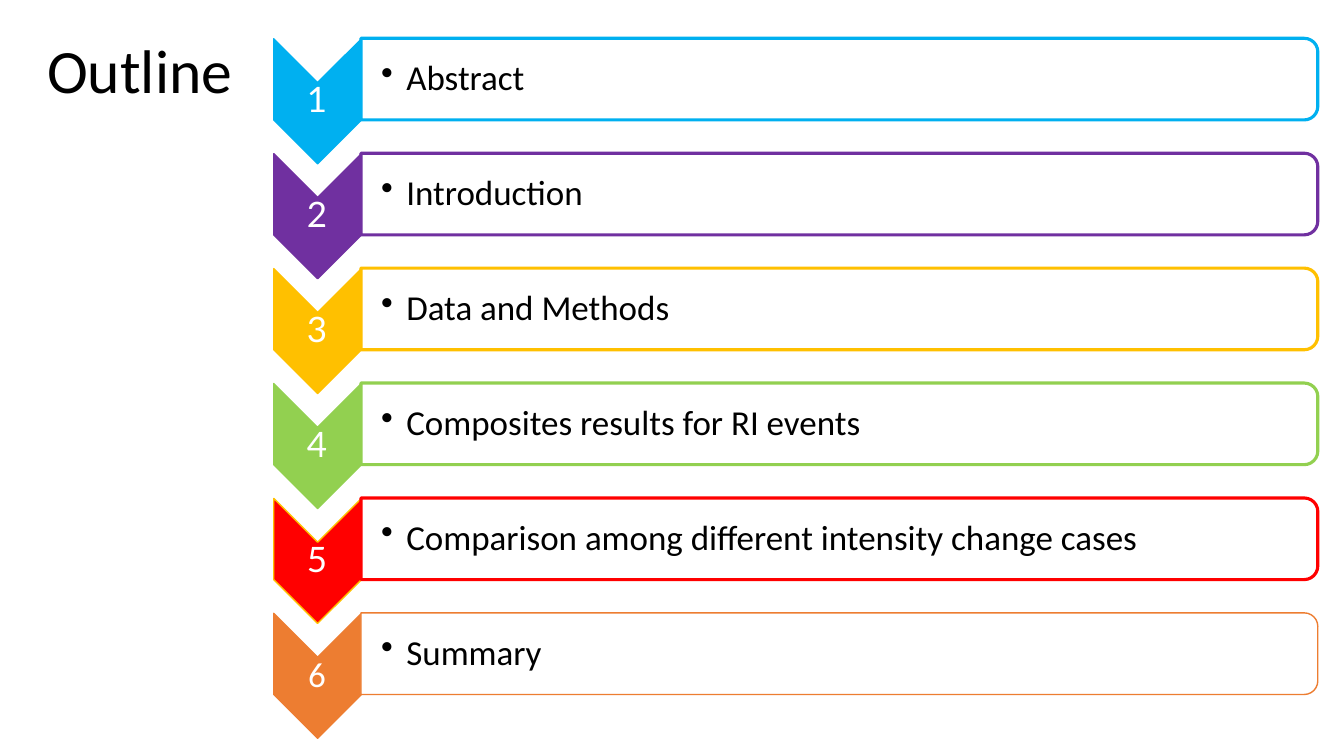
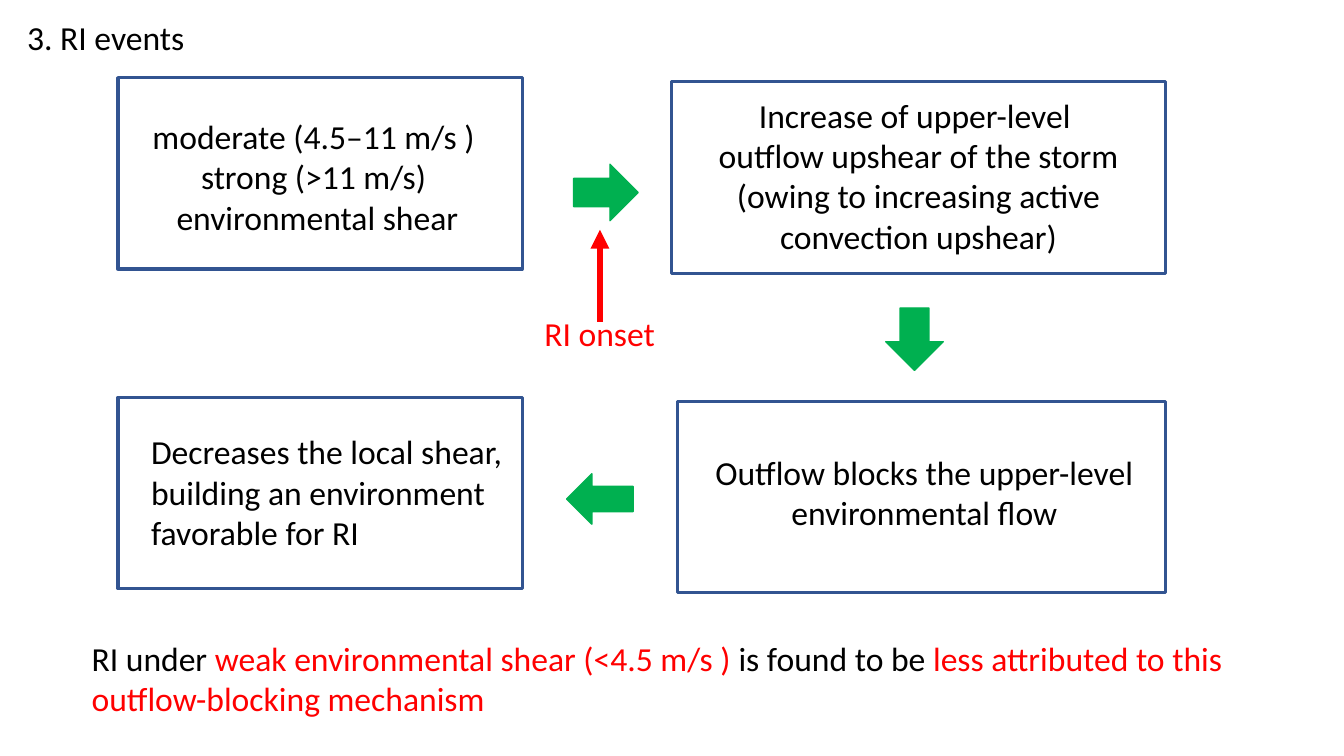
from dataclasses import dataclass
from typing import NamedTuple

from lxml import etree
from pptx import Presentation
from pptx import util as u
from pptx.dml.color import RGBColor
from pptx.enum import shapes, text
from pptx.oxml import ns

EMU_PER_PX = 9144  # 100 px to the inch

BLACK, WHITE, RED = "000000", "FFFFFF", "FF0000"
BOX_BLUE, FLOW_GREEN = "325491", "00B050"
BODY_FONT, NUMBER_FONT = "Calibri", "Lato"

LEFT, CENTER, JUSTIFY = text.PP_ALIGN.LEFT, text.PP_ALIGN.CENTER, text.PP_ALIGN.JUSTIFY
TOP, MIDDLE = text.MSO_ANCHOR.TOP, text.MSO_ANCHOR.MIDDLE
SHAPE = shapes.MSO_SHAPE


class Area(NamedTuple):
    left: int
    top: int
    width: int
    height: int


class Span(NamedTuple):
    text: str
    color: str = BLACK


@dataclass(frozen=True)
class TextStyle:
    size: int = 24
    font: str = BODY_FONT
    align: text.PP_ALIGN = LEFT
    anchor: text.MSO_ANCHOR = TOP
    spacing: float = 1.0
    insets: tuple[int, int, int, int] = (10, 5, 10, 5)
    wrap: bool = True
    bullet_indent: int = 0


@dataclass(frozen=True)
class Topic:
    name: str
    color: str
    chevron_line: str
    bar_line_pt: float = 2.25
    number_font: str = NUMBER_FONT


@dataclass(frozen=True)
class Step:
    box: Area
    text_area: Area
    words: str
    align: text.PP_ALIGN = CENTER


@dataclass(frozen=True)
class FlowArrow:
    area: Area
    rotation: int


TOPICS = [
    Topic("Abstract", "00B0F0", "00B0F0"),
    Topic("Introduction", "7030A0", "7030A0"),
    Topic("Data and Methods", "FFC000", "FFC000"),
    Topic("Composites results for RI events", "92D050", "92D050"),
    Topic("Comparison among different intensity change cases", RED, "FFC000"),
    Topic("Summary", "ED7D31", "ED7D31", 1, BODY_FONT),
]
TOPIC_PITCH = 114

STEPS = [
    Step(Area(117, 77, 401, 190), Area(140, 110, 342, 131),
         "moderate (4.5–11 m/s ) \nstrong (>11 m/s)\n environmental shear"),
    Step(Area(666, 81, 490, 190), Area(699, 89, 424, 172),
         "Increase of upper-level \noutflow upshear of the storm\n"
         "(owing to increasing active convection upshear)"),
    Step(Area(672, 398, 484, 190), Area(587, 443, 667, 91),
         "Outflow blocks the upper-level \nenvironmental flow "),
    Step(Area(117, 394, 401, 190), Area(140, 423, 667, 131),
         "Decreases the local shear,\nbuilding an environment\nfavorable for RI", LEFT),
]

FLOW_ARROWS = [
    FlowArrow(Area(569, 163, 64, 56), 0),
    FlowArrow(Area(876, 308, 62, 57), 90),
    FlowArrow(Area(562, 470, 66, 50), 180),
]

CONCLUSION = [
    [Span("RI under "), Span("weak environmental shear (<4.5 m/s ) ", RED),
     Span("is found to be "), Span("less attributed to this", RED)],
    [Span("outflow-blocking mechanism", RED)],
]


def px(length: int) -> u.Emu:
    return u.Emu(length * EMU_PER_PX)


def rgb(color: str) -> RGBColor:
    return RGBColor.from_string(color)


def plain(words: str, color: str = BLACK) -> list[list[Span]]:
    """Split words into one single-coloured paragraph per line."""
    return [[Span(line, color)] for line in words.split("\n")]


def add_bullet(paragraph, indent: int) -> None:
    properties = paragraph._p.get_or_add_pPr()
    properties.set("marL", str(px(indent)))
    properties.set("indent", str(-px(indent)))
    etree.SubElement(properties, ns.qn("a:buChar")).set("char", "•")


def add_text(slide, area: Area, paragraphs: list[list[Span]], style: TextStyle) -> None:
    frame = slide.shapes.add_textbox(*map(px, area)).text_frame
    frame.word_wrap = style.wrap
    frame.vertical_anchor = style.anchor
    (frame.margin_left, frame.margin_top,
     frame.margin_right, frame.margin_bottom) = map(px, style.insets)
    for index, spans in enumerate(paragraphs):
        paragraph = frame.add_paragraph() if index else frame.paragraphs[0]
        paragraph.alignment = style.align
        paragraph.line_spacing = style.spacing
        if style.bullet_indent:
            add_bullet(paragraph, style.bullet_indent)
        for span in spans:
            run = paragraph.add_run()
            run.text = span.text
            run.font.size = u.Pt(style.size)
            run.font.name = style.font
            run.font.color.rgb = rgb(span.color)


def add_figure(slide, preset: shapes.MSO_SHAPE, area: Area, fill: str | None,
               line: str, line_pt: float, rotation: int = 0) -> None:
    figure = slide.shapes.add_shape(preset, *map(px, area))
    figure.shadow.inherit = False
    figure.rotation = rotation
    if fill is None:
        figure.fill.background()
    else:
        figure.fill.solid()
        figure.fill.fore_color.rgb = rgb(fill)
    figure.line.color.rgb = rgb(line)
    figure.line.width = u.Pt(line_pt)


def add_arrow_line(slide, start: tuple[int, int], end: tuple[int, int],
                   color: str, width_pt: float) -> None:
    arrow = slide.shapes.add_connector(
        shapes.MSO_CONNECTOR.STRAIGHT, *map(px, start + end))
    arrow.line.color.rgb = rgb(color)
    arrow.line.width = u.Pt(width_pt)
    etree.SubElement(arrow.line._get_or_add_ln(), ns.qn("a:tailEnd")).set("type", "triangle")
    etree.SubElement(arrow._element.spPr, ns.qn("a:effectLst"))


def add_topic(slide, index: int, topic: Topic) -> None:
    offset = index * TOPIC_PITCH
    number_style = TextStyle(25, topic.number_font, CENTER, MIDDLE, 0.9, (2, 2, 2, 2))
    name_style = TextStyle(25, anchor=MIDDLE, spacing=0.9, insets=(19, 2, 2, 2),
                           bullet_indent=25)
    add_figure(slide, SHAPE.CHEVRON, Area(253, 57 + offset, 124, 87),
               topic.color, topic.chevron_line, 1, 90)
    add_text(slide, Area(271, 82 + offset, 87, 37),
             plain(str(index + 1), WHITE), number_style)
    add_figure(slide, SHAPE.ROUND_2_SAME_RECTANGLE, Area(792, -396 + offset, 81, 949),
               WHITE, topic.color, topic.bar_line_pt, 90)
    add_text(slide, Area(359, 42 + offset, 945, 73), plain(topic.name), name_style)


def build_outline(slide) -> None:
    add_text(slide, Area(37, 0, 1150, 145), plain("Outline"),
             TextStyle(44, anchor=MIDDLE, spacing=0.9))
    for index, topic in enumerate(TOPICS):
        add_topic(slide, index, topic)


def build_ri_events(slide) -> None:
    add_text(slide, Area(17, 12, 1209, 131), plain("3. RI events"), TextStyle(align=JUSTIFY))
    for step in STEPS:
        add_figure(slide, SHAPE.RECTANGLE, step.box, None, BOX_BLUE, 2.25)
        add_text(slide, step.text_area, plain(step.words), TextStyle(align=step.align))
    for arrow in FLOW_ARROWS:
        add_figure(slide, SHAPE.RIGHT_ARROW, arrow.area, FLOW_GREEN, FLOW_GREEN, 1,
                   arrow.rotation)
    add_text(slide, Area(530, 306, 131, 50), plain("RI onset", RED), TextStyle(wrap=False))
    add_arrow_line(slide, (595, 319), (595, 228), RED, 4.5)
    add_text(slide, Area(81, 628, 1159, 91), CONCLUSION, TextStyle())


def main() -> None:
    deck = Presentation()
    deck.slide_width, deck.slide_height = px(1333), px(750)
    blank = deck.slide_layouts[6]
    for build in (build_outline, build_ri_events):
        build(deck.slides.add_slide(blank))
    deck.save("out.pptx")


if __name__ == "__main__":
    main()
